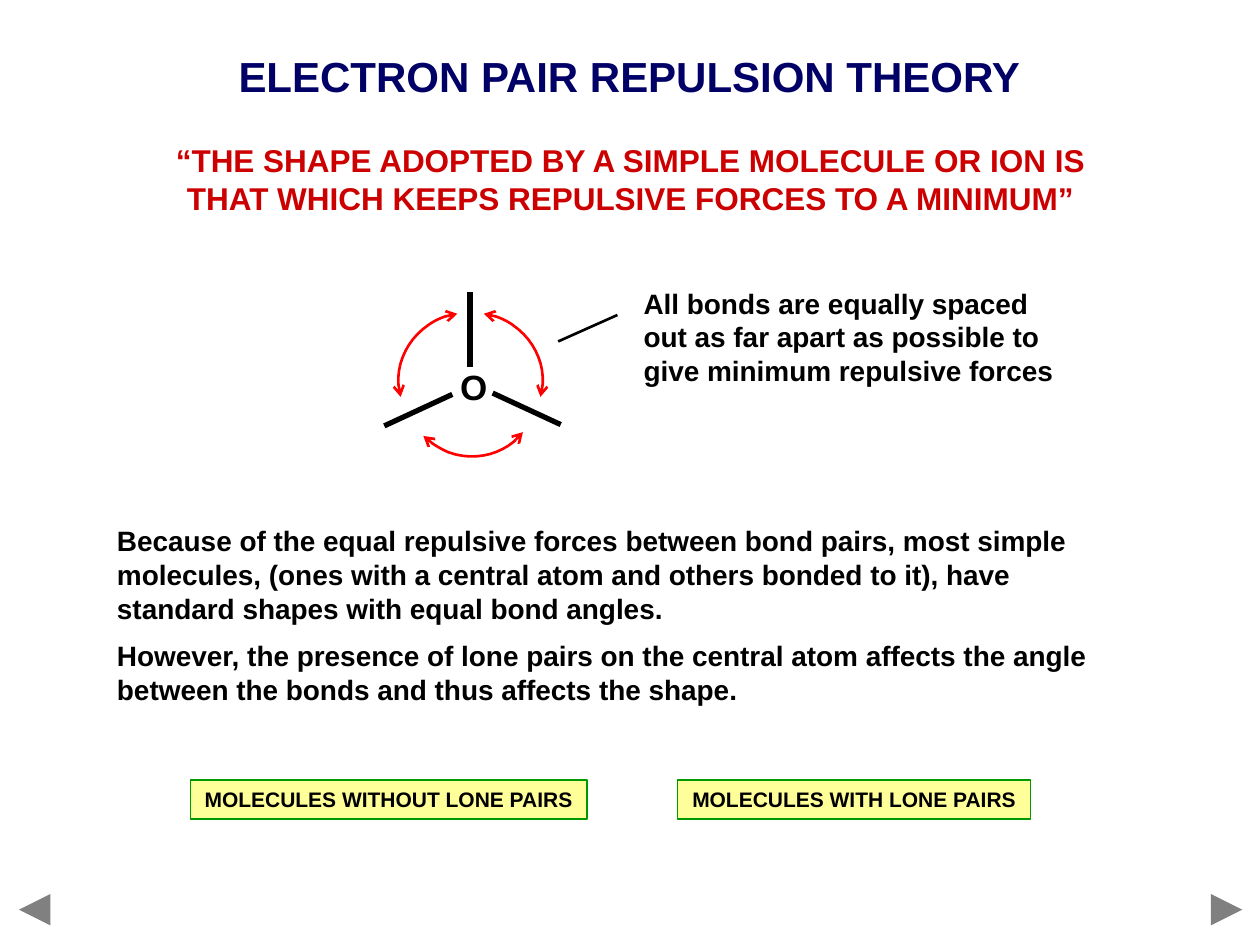
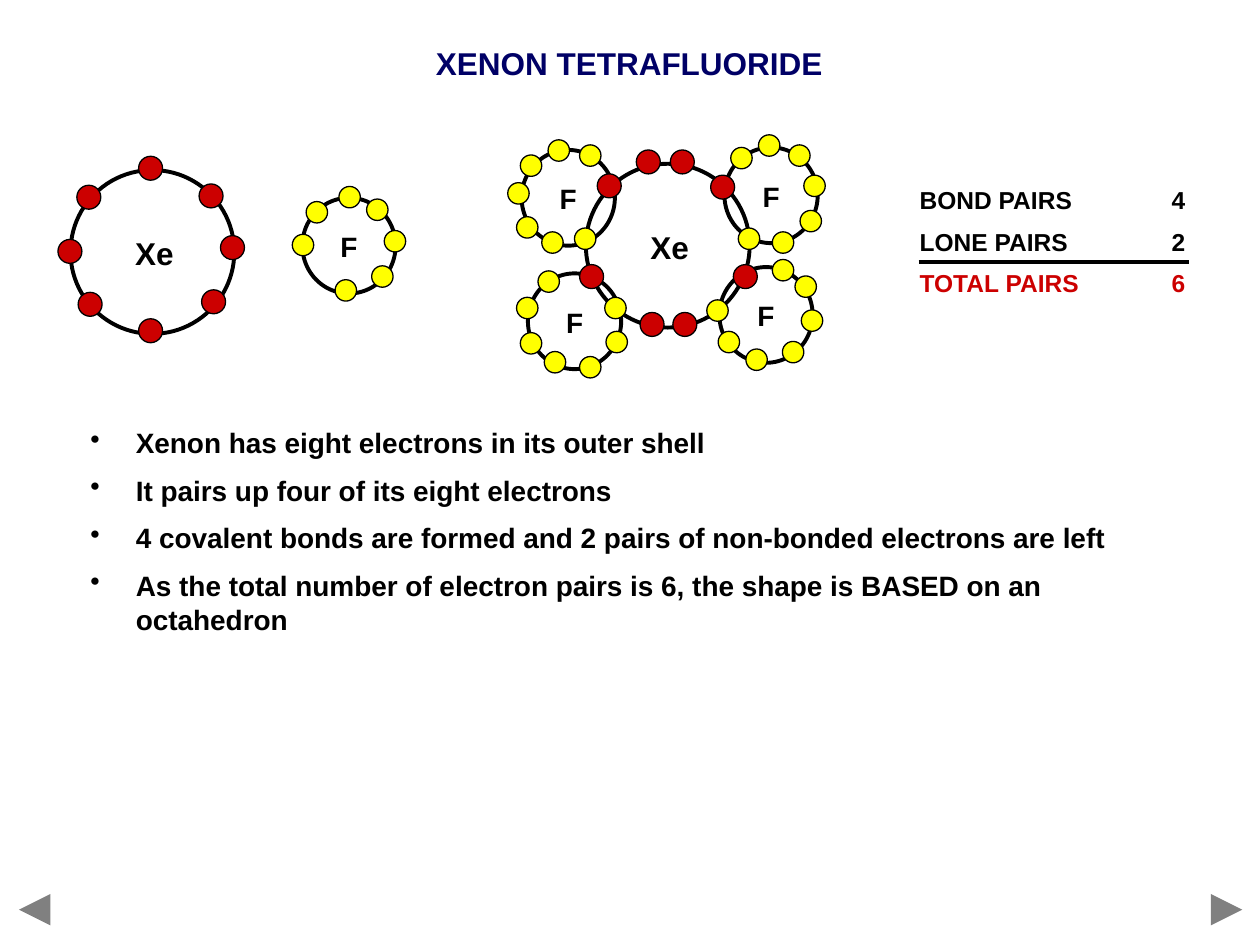
from dataclasses import dataclass
from typing import Optional

import lxml.etree
import pptx
import pptx.dml.color
import pptx.enum.shapes
import pptx.enum.text
import pptx.oxml.ns
import pptx.util

Inches = pptx.util.Inches
Pt = pptx.util.Pt
qn = pptx.oxml.ns.qn
PP_ALIGN = pptx.enum.text.PP_ALIGN
MSO_ANCHOR = pptx.enum.text.MSO_ANCHOR
MSO_SHAPE = pptx.enum.shapes.MSO_SHAPE
Point = tuple[float, float]
Box = tuple[float, float, float, float]


@dataclass(frozen=True)
class Theme:
    font: str = "Arial"
    black: str = "000000"
    navy: str = "000066"
    red: str = "CC0000"
    arc_red: str = "FF0000"
    yellow: str = "FFFF00"
    button_fill: str = "FFFF99"
    button_line: str = "009900"
    grey: str = "808080"
    title: int = 24
    heading: int = 18
    body: int = 16
    centre_atom: int = 20
    table: int = 14
    button: int = 12


@dataclass(frozen=True)
class AtomKind:
    symbol: str
    ring: Point            # width, height
    label: Box             # offset from the ring, width, height
    label_size: int
    electron_color: str
    electron_size: float


@dataclass(frozen=True)
class Atom:
    kind: AtomKind
    at: Point
    electrons: list[Point]
    shared: Optional[Point] = None   # electron belonging to the central atom


T = Theme()
XENON = AtomKind("Xe", (1.3, 1.3), (0.41, 0.46, 0.51, 0.4), T.heading, T.red, 0.19)
FLUORINE = AtomKind("F", (0.74, 0.76), (0.2, 0.2, 0.34, 0.37), T.body, T.yellow, 0.17)


def rgb(color: str) -> pptx.dml.color.RGBColor:
    return pptx.dml.color.RGBColor.from_string(color)


def inches(*values: float) -> list:
    return [Inches(v) for v in values]


# Text
def write(sp, lines: list[str], size: int, color: str = T.black, align=PP_ALIGN.LEFT,
          anchor=MSO_ANCHOR.TOP, wrap: bool = True):
    """Fill a shape with bold paragraphs spaced by half the type size."""
    tf = sp.text_frame
    tf.text = "\n".join(lines)
    tf.word_wrap = wrap
    tf.vertical_anchor = anchor
    tf.margin_left = tf.margin_right = Inches(0.1)
    tf.margin_top = tf.margin_bottom = Inches(0.05)
    for i, p in enumerate(tf.paragraphs):
        p.alignment = align
        p.space_before = Pt(size / 2 if i else 0)
        for r in p.runs:
            r.font.name = T.font
            r.font.size = Pt(size)
            r.font.bold = True
            r.font.color.rgb = rgb(color)
    return tf


def add_text(shapes, box: Box, lines: list[str], size: int, **style):
    return write(shapes.add_textbox(*inches(*box)), lines, size, **style)


def add_label(shapes, box: Box, text: str, size: int) -> None:
    add_text(shapes, box, [text], size, align=PP_ALIGN.CENTER,
             anchor=MSO_ANCHOR.MIDDLE, wrap=False)


# Lines and shapes
def style_line(line, color: str, width: float) -> None:
    line.color.rgb = rgb(color)
    line.width = Pt(width)


def add_arrowheads(sp, **ends: str) -> None:
    ln = sp.line._get_or_add_ln()
    for end, kind in ends.items():
        lxml.etree.SubElement(ln, qn(f"a:{end}"), type=kind)


def add_line(shapes, start: Point, end: Point, width: float, color: str = T.black):
    sp = shapes.add_connector(pptx.enum.shapes.MSO_CONNECTOR.STRAIGHT,
                              *inches(*start, *end))
    style_line(sp.line, color, width)
    lxml.etree.SubElement(sp._element.spPr, qn("a:effectLst"))
    return sp


def add_box(shapes, preset, box: Box, fill: Optional[str], line: str, width: float):
    sp = shapes.add_shape(preset, *inches(*box))
    sp.shadow.inherit = False
    if fill:
        sp.fill.solid()
        sp.fill.fore_color.rgb = rgb(fill)
    else:
        sp.fill.background()
    style_line(sp.line, line, width)
    return sp


def bezier(p0: Point, p1: Point, p2: Point, p3: Point, steps: int = 12) -> list[Point]:
    points = []
    for i in range(1, steps + 1):
        t = i / steps
        u = 1 - t
        x, y = (u**3 * a + 3 * u * u * t * b + 3 * u * t * t * c + t**3 * d
                for a, b, c, d in zip(p0, p1, p2, p3))
        points.append((x, y))
    return points


def add_arc(shapes, knots: list[Point]) -> None:
    """Draw a double-headed arc through two joined cubic curves."""
    points = bezier(*knots[:4]) + bezier(*knots[3:])
    builder = shapes.build_freeform(*inches(*knots[0]))
    builder.add_line_segments([inches(*point) for point in points], close=False)
    sp = builder.convert_to_shape()
    sp.shadow.inherit = False
    sp.fill.background()
    style_line(sp.line, T.arc_red, 1.5)
    add_arrowheads(sp, headEnd="arrow", tailEnd="arrow")


# Atoms
def add_electron(shapes, kind: AtomKind, at: Point) -> None:
    size = kind.electron_size
    add_box(shapes, MSO_SHAPE.OVAL, (*at, size, size), kind.electron_color, T.black, 0.75)


def add_atom(shapes, atom: Atom) -> None:
    kind = atom.kind
    left, top = atom.at
    add_box(shapes, MSO_SHAPE.OVAL, (left, top, *kind.ring), None, T.black, 2.25)
    dx, dy, width, height = kind.label
    add_label(shapes, (left + dx, top + dy, width, height), kind.symbol, kind.label_size)
    for at in atom.electrons:
        add_electron(shapes, kind, at)
    if atom.shared:
        add_electron(shapes, XENON, atom.shared)


# Shared slide frame: title and navigation arrows
def add_slide(prs, title: str, box: Box, size: int):
    s = prs.slides.add_slide(prs.slide_layouts[5])
    sp = s.shapes.title
    sp.left, sp.top, sp.width, sp.height = inches(*box)
    write(sp, [title], size, color=T.navy, align=PP_ALIGN.CENTER,
          anchor=MSO_ANCHOR.MIDDLE, wrap=False)
    for start, end in ((9.65, 9.86), (0.36, 0.15)):
        arrow = add_line(s.shapes, (start, 7.22), (end, 7.22), 6, T.grey)
        add_arrowheads(arrow, tailEnd="triangle")
    return s


def build_theory(prs) -> None:
    s = add_slide(prs, "ELECTRON PAIR REPULSION THEORY", (1.58, 0.35, 6.83, 0.5), T.title)
    add_text(s.shapes, (0.97, 1.07, 8.07, 0.95),
             ["“THE SHAPE ADOPTED BY A SIMPLE MOLECULE OR ION IS "
              "THAT WHICH KEEPS REPULSIVE FORCES TO A MINIMUM”"],
             T.heading, color=T.red, align=PP_ALIGN.CENTER)

    # Buttons
    for left, width, text in ((1.51, 3.15, "MOLECULES WITHOUT LONE PAIRS"),
                              (5.38, 2.8, "MOLECULES WITH LONE PAIRS")):
        sp = add_box(s.shapes, MSO_SHAPE.RECTANGLE, (left, 6.19, width, 0.31),
                     T.button_fill, T.button_line, 0.75)
        write(sp, [text], T.button, align=PP_ALIGN.CENTER,
              anchor=MSO_ANCHOR.MIDDLE, wrap=False)

    # Explanation
    add_text(s.shapes, (0.83, 4.11, 8.25, 1.57),
             ["Because of the equal repulsive forces between bond pairs, most simple "
              "molecules, (ones with a central atom and others bonded to it), have "
              "standard shapes with equal bond angles.",
              "However, the presence of lone pairs on the central atom affects the angle "
              "between the bonds and thus affects the shape."], T.body)

    # Bonds around the central atom, pushed apart by double-headed arcs
    molecule = s.shapes.add_group_shape().shapes
    add_label(molecule, (3.55, 2.85, 0.42, 0.43), "O", T.centre_atom)
    for start, end in (((3.73, 2.32), (3.73, 2.91)),
                       ((3.59, 3.13), (3.05, 3.38)),
                       ((3.91, 3.12), (4.45, 3.37))):
        add_line(molecule, start, end, 3)
    left_arc = [(3.18, 3.15), (3.12, 2.94), (3.21, 2.71), (3.4, 2.58),
                (3.47, 2.53), (3.55, 2.5), (3.63, 2.49)]
    right_arc = [(7.47 - x, y) for x, y in left_arc]
    lower_arc = [(4.15, 3.43), (4.02, 3.6), (3.78, 3.67), (3.56, 3.59),
                 (3.49, 3.56), (3.41, 3.51), (3.36, 3.46)]
    for arc in (left_arc, right_arc, lower_arc):
        add_arc(molecule, arc)

    # Callout
    add_text(s.shapes, (5.01, 2.22, 3.53, 0.9),
             ["All bonds are equally spaced out as far apart as possible to "
              "give minimum repulsive forces"], T.body, anchor=MSO_ANCHOR.MIDDLE)
    add_line(s.shapes, (4.43, 2.71), (4.9, 2.5), 1.5)


def build_xenon(prs) -> None:
    s = add_slide(prs, "XENON TETRAFLUORIDE", (3.36, 0.3, 3.27, 0.4), T.heading)

    # Separate atoms, then the molecule
    fluorine = Atom(FLUORINE, (2.4, 1.57), [
        (2.69, 1.48), (2.32, 1.86), (3.05, 1.83), (2.43, 1.6),
        (2.91, 1.58), (2.95, 2.11), (2.66, 2.22)])
    xenon = Atom(XENON, (0.56, 1.35), [
        (1.1, 1.24), (0.61, 1.47), (0.46, 1.9), (1.75, 1.87),
        (1.58, 1.46), (1.1, 2.53), (0.62, 2.32), (1.6, 2.3)])
    molecule = [
        Atom(XENON, (4.65, 1.3), [(5.05, 1.19), (5.32, 1.19), (5.08, 2.48), (5.34, 2.48)]),
        Atom(FLUORINE, (4.14, 1.19), [
            (4.56, 1.81), (4.03, 1.45), (4.13, 1.23), (4.6, 1.15),
            (4.1, 1.72), (4.3, 1.84), (4.35, 1.11)], (4.74, 1.38)),
        Atom(FLUORINE, (4.19, 2.17), [
            (4.81, 2.63), (4.13, 2.64), (4.1, 2.36), (4.8, 2.36),
            (4.32, 2.79), (4.6, 2.83), (4.27, 2.15)], (4.6, 2.1)),
        Atom(FLUORINE, (5.75, 1.17), [
            (6.13, 1.84), (6.38, 1.39), (5.8, 1.17), (6.26, 1.15),
            (5.86, 1.81), (6.02, 1.07), (6.35, 1.67)], (5.64, 1.39)),
        Atom(FLUORINE, (5.71, 2.12), [
            (6.13, 2.06), (5.7, 2.63), (5.61, 2.38), (6.36, 2.46),
            (6.21, 2.71), (5.92, 2.77), (6.31, 2.19)], (5.82, 2.1)),
    ]
    for atoms in ([fluorine], [xenon], molecule):
        group = s.shapes.add_group_shape().shapes
        for atom in atoms:
            add_atom(group, atom)

    # Bulleted explanation
    tf = add_text(s.shapes, (0.62, 3.33, 8.96, 1.57), [
        "Xenon has eight electrons in its outer shell",
        "It pairs up four of its eight electrons",
        "4 covalent bonds are formed and 2 pairs of non-bonded electrons are left",
        "As the total number of electron pairs is 6, the shape is BASED on an octahedron",
    ], T.body)
    indent = Inches(0.36)
    for p in tf.paragraphs:
        pPr = p._p.get_or_add_pPr()
        pPr.set("marL", str(indent))
        pPr.set("indent", str(-indent))
        lxml.etree.SubElement(pPr, qn("a:buChar"), char="•")

    # Pair count with a rule above the total
    group = s.shapes.add_group_shape().shapes
    tf = add_text(group, (7.2, 1.4, 2.31, 1.03),
                  ["BOND PAIRS\t4", "LONE PAIRS\t2", "TOTAL PAIRS\t6"],
                  T.table, anchor=MSO_ANCHOR.MIDDLE, wrap=False)
    for p in tf.paragraphs:
        tabs = lxml.etree.SubElement(p._p.get_or_add_pPr(), qn("a:tabLst"))
        lxml.etree.SubElement(tabs, qn("a:tab"), pos=str(Inches(2)), algn="l")
    for r in tf.paragraphs[-1].runs:
        r.font.color.rgb = rgb(T.red)
    add_line(group, (7.29, 2.08), (9.44, 2.08), 2.25)


def main() -> None:
    prs = pptx.Presentation()
    prs.slide_width, prs.slide_height = inches(10, 7.5)
    build_theory(prs)
    build_xenon(prs)
    prs.save("out.pptx")


if __name__ == "__main__":
    main()
